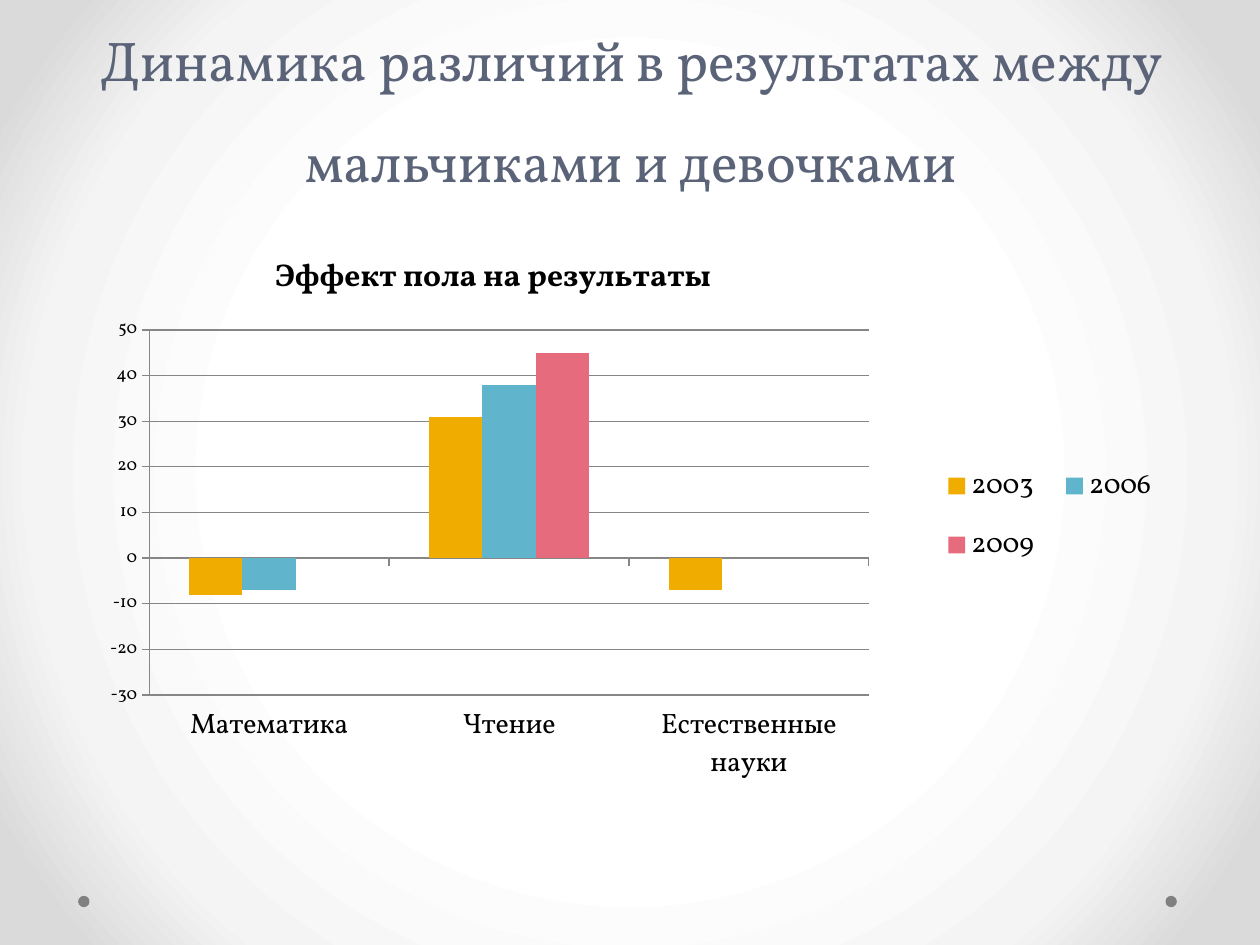
"""Build a slide with a clustered column chart of gender effects on results."""
from lxml.etree import SubElement
from pptx import Presentation
from pptx.chart.data import CategoryChartData
from pptx.dml.color import RGBColor
from pptx.enum.chart import XL_CHART_TYPE as CT, XL_LEGEND_POSITION as LP
from pptx.enum.chart import XL_TICK_LABEL_POSITION as TLP, XL_TICK_MARK as TM
from pptx.enum.shapes import MSO_SHAPE
from pptx.enum.text import MSO_ANCHOR, PP_ALIGN
from pptx.oxml import parse_xml
from pptx.oxml.ns import nsdecls, qn
from pptx.util import Inches, Pt

FONT = "Vollkorn"
SLATE = RGBColor(0x5A, 0x63, 0x78)
BLACK = RGBColor(0, 0, 0)
GREY = RGBColor(0x80, 0x80, 0x80)
LINE = RGBColor(0x86, 0x86, 0x86)
COLORS = [RGBColor(0xF0, 0xAD, 0x00), RGBColor(0x60, 0xB5, 0xCC), RGBColor(0xE6, 0x6C, 0x7D)]
STOPS = [(50, "FFFFFF"), (76, "F4F4F4"), (92, "DADADA")]
SERIES = {"2003": (-8, 31, -7), "2006": (-7, 38, None), "2009": (None, 45, None)}


def style(font, size, color=BLACK, bold=False):
    font.name, font.size, font.bold = FONT, Pt(size), bold
    font.color.rgb = color


def place(element, before, **values):
    for old in element.findall(qn("c:layout")):
        element.remove(old)
    layout = parse_xml(f"<c:layout {nsdecls('c')}><c:manualLayout/></c:layout>")
    for tag, value in values.items():
        SubElement(layout[0], qn(f"c:{tag}")).set("val", str(value))
    element.find(qn(before)).addprevious(layout)


prs = Presentation()
prs.slide_width, prs.slide_height = Inches(10), Inches(7.5)
W, H = prs.slide_width, prs.slide_height
s = prs.slides.add_slide(prs.slide_layouts[5])

s.background.fill.gradient()
grad = s.background.fill._fill._gradFill
stops = "".join(f'<a:gs pos="{pos * 1000}"><a:srgbClr val="{rgb}"/></a:gs>' for pos, rgb in STOPS)
grad.getparent().replace(grad, parse_xml(
    f'<a:gradFill {nsdecls("a")} rotWithShape="1"><a:gsLst>{stops}</a:gsLst><a:path path="circle">'
    '<a:fillToRect l="50000" t="50000" r="50000" b="50000"/></a:path></a:gradFill>'))

for left in (0.925, 0.062):
    sp = s.shapes.add_shape(MSO_SHAPE.OVAL, int(W * left), int(H * 0.948), Inches(0.09), Inches(0.09))
    sp.shadow.inherit = False
    sp.fill.solid()
    sp.fill.fore_color.rgb = GREY
    sp.line.fill.background()

title = s.shapes.title
title.left, title.top, title.width, title.height = Inches(0.51), Inches(0.36), Inches(9), Inches(1.23)
tf = title.text_frame
tf.text = "Динамика различий в результатах между мальчиками и девочками"
tf.word_wrap = True
tf.vertical_anchor = MSO_ANCHOR.BOTTOM
p = tf.paragraphs[0]
p.alignment, p.line_spacing = PP_ALIGN.CENTER, Pt(58)
style(p.runs[0].font, 32, SLATE)

data = CategoryChartData(number_format="0")
data.categories = ["Математика", "Чтение", "Естественные науки"]
for name, values in SERIES.items():
    data.add_series(name, values)
chart = s.shapes.add_chart(
    CT.COLUMN_CLUSTERED, Inches(0.43), Inches(1.62), Inches(8.98), Inches(4.8), data).chart
style(chart.font, 10)

chart.has_title = True
tf = chart.chart_title.text_frame
tf.text = "Эффект пола на результаты"
style(tf.paragraphs[0].runs[0].font, 18, bold=True)
chart.chart_title.include_in_layout = False
place(chart.chart_title._element, "c:overlay", xMode="edge", yMode="edge", x=0.19, y=0.07)

chart.has_legend = True
chart.legend.position = LP.RIGHT
chart.legend.include_in_layout = False
style(chart.legend.font, 16)
place(chart.legend._element, "c:overlay", xMode="edge", yMode="edge", x=0.77, y=0.4, w=0.22, h=0.23)

plot = chart.plots[0]
plot.gap_width, plot.overlap, plot.vary_by_categories = 150, 0, False
place(plot._element.getparent(), "c:barChart", layoutTarget="inner", xMode="edge", yMode="edge",
      x=0.084, y=0.208, w=0.636, h=0.604)
for series, color in zip(plot.series, COLORS):
    series.invert_if_negative = False
    series.format.fill.solid()
    series.format.fill.fore_color.rgb = color

cat, val = chart.category_axis, chart.value_axis
cat.tick_label_position = TLP.LOW
val.minimum_scale, val.maximum_scale, val.major_unit = -30, 50, 10
val.has_major_gridlines = True
val.tick_labels.number_format, val.tick_labels.number_format_is_linked = "0", False
for axis, size in ((cat, 16), (val, 10)):
    axis.major_tick_mark = TM.OUTSIDE
    style(axis.tick_labels.font, size)
for line in (cat.format.line, val.format.line, val.major_gridlines.format.line):
    line.width = Pt(0.75)
    line.color.rgb = LINE

prs.save("out.pptx")
